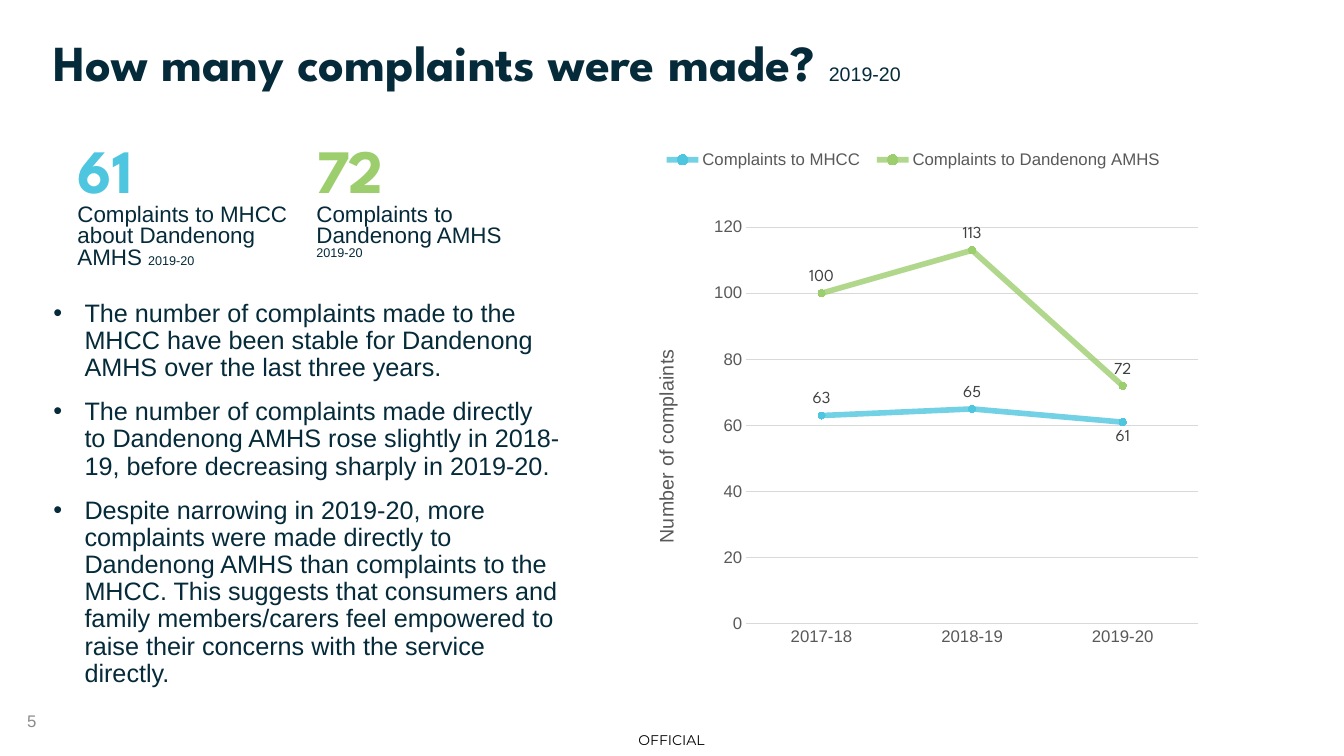
from pptx import Presentation
from pptx.chart.data import CategoryChartData
from pptx.dml.color import RGBColor
from pptx.enum.chart import (XL_CHART_TYPE, XL_LABEL_POSITION, XL_LEGEND_POSITION,
                             XL_MARKER_STYLE, XL_TICK_MARK)
from pptx.enum.text import MSO_ANCHOR, PP_ALIGN
from pptx.oxml import parse_xml
from pptx.oxml.ns import nsdecls, qn
from pptx.util import Inches, Pt
from lxml.etree import SubElement

COLORS = {"navy": "052A39", "blue": "4FC6DF", "green": "9DCE6E", "black": "000000",
          "page": "8C8C8C", "axis": "595959", "grid": "D9D9D9", "label": "404040"}
HEADING, BODY, MARKING = "League Spartan", "Arial", "Montserrat"


class ComplaintsSlide:
    def __init__(self, presentation):
        self.slide = presentation.slides.add_slide(presentation.slide_layouts[6])

    def style(self, font, size, color, name=BODY, bold=False):
        font.size, font.name, font.bold = Pt(size), name, bold
        font.color.rgb = RGBColor.from_string(COLORS[color])

    def text(self, box, lines, spacing=None, align=None, anchor=MSO_ANCHOR.TOP, inset=None):
        """Each line is a list of (text, size, color, font name, bold) pieces."""
        frame = self.slide.shapes.add_textbox(*map(Inches, box)).text_frame
        frame.word_wrap = True
        frame.vertical_anchor = anchor
        if inset is not None:
            frame.margin_left = frame.margin_right = Inches(inset)
            frame.margin_top = frame.margin_bottom = Inches(inset)
        for index, pieces in enumerate(lines):
            paragraph = frame.paragraphs[0] if index == 0 else frame.add_paragraph()
            paragraph.line_spacing, paragraph.alignment = spacing, align
            for words, *look in pieces:
                if words.startswith("\n"):
                    paragraph.add_line_break()
                run = paragraph.add_run()
                run.text = words.strip("\n")
                self.style(run.font, *look)

    def bullets(self, box, points):
        frame = self.slide.shapes.add_textbox(*map(Inches, box)).text_frame
        frame.word_wrap = True
        for index, point in enumerate(points):
            paragraph = frame.paragraphs[0] if index == 0 else frame.add_paragraph()
            paragraph.text = point
            paragraph.line_spacing = 0.9
            paragraph.space_before = Pt(6 if index else 0)
            paragraph.space_after = Pt(6)
            properties = paragraph._p.get_or_add_pPr()
            properties.set("marL", str(Inches(0.31)))
            properties.set("indent", str(-Inches(0.31)))
            SubElement(properties, qn("a:buFont"), typeface=BODY)
            SubElement(properties, qn("a:buChar"), char="•")
            self.style(paragraph.runs[0].font, 18, "navy")

    def layout(self, **values):
        modes = "".join(f'<c:{side}Mode val="{mode}"/>' for side, mode in
                        (("x", "edge"), ("y", "edge")))
        sizes = "".join(f'<c:{key} val="{value}"/>' for key, value in values.items())
        return modes + sizes

    def place(self, element, position, target="", **values):
        """Give a chart part a manual layout, as fractions of the chart."""
        for existing in element.findall(qn("c:layout")):
            element.remove(existing)
        layout = parse_xml(f'<c:layout {nsdecls("c")}><c:manualLayout>{target}'
                           f'{self.layout(**values)}</c:manualLayout></c:layout>')
        element.insert(position, layout)

    def line_chart(self, box, categories, series, axis_title):
        data = CategoryChartData()
        data.categories = categories
        for name, values, _ in series:
            data.add_series(name, values)
        chart = self.slide.shapes.add_chart(
            XL_CHART_TYPE.LINE_MARKERS, *map(Inches, box), data).chart
        self.style(chart.font, 10, "black")
        chart.has_title = False
        grid_color = RGBColor.from_string(COLORS["grid"])

        # Axes
        years, counts = chart.category_axis, chart.value_axis
        for axis in (years, counts):
            axis.major_tick_mark = axis.minor_tick_mark = XL_TICK_MARK.NONE
            self.style(axis.tick_labels.font, 12, "axis")
        counts.minimum_scale, counts.maximum_scale, counts.major_unit = 0, 120, 20
        counts.format.line.fill.background()
        for line in (years.format.line, counts.major_gridlines.format.line):
            line.color.rgb, line.width = grid_color, Pt(0.75)
        title = counts.axis_title
        title.text_frame.text = axis_title
        self.style(title.text_frame.paragraphs[0].runs[0].font, 14, "axis")
        self.place(title._element, 1, x=0.01, y=0.4)

        # Legend and plot area
        chart.has_legend = True
        chart.legend.position = XL_LEGEND_POSITION.BOTTOM
        chart.legend.include_in_layout = False
        self.style(chart.legend.font, 12, "axis")
        self.place(chart.legend._element, 1, x=0.02, y=0.03, w=0.9, h=0.06)
        self.place(chart._chartSpace.chart.plotArea, 0, '<c:layoutTarget val="inner"/>',
                   x=0.178, y=0.183, w=0.789, h=0.725)

        # Lines, markers and value labels
        chart.plots[0].vary_by_categories = False
        for trend, (_, _, color) in zip(chart.plots[0].series, series):
            rgb = RGBColor.from_string(COLORS[color])
            trend.smooth = False
            trend.format.line.color.rgb, trend.format.line.width = rgb, Pt(4)
            stroke = trend.format.line._ln.find(".//" + qn("a:srgbClr"))
            SubElement(stroke, qn("a:alpha"), val="80000")
            trend.marker.style, trend.marker.size = XL_MARKER_STYLE.CIRCLE, 5
            trend.marker.format.fill.solid()
            trend.marker.format.fill.fore_color.rgb = rgb
            trend.marker.format.line.color.rgb = rgb
            labels = trend.data_labels
            labels.show_value, labels.position = True, XL_LABEL_POSITION.ABOVE
            self.style(labels.font, 12, "label", HEADING)
        last_label = chart.plots[0].series[0].points[2].data_label
        self.style(last_label.font, 12, "label", HEADING)
        last_label.position = XL_LABEL_POSITION.BELOW


def main():
    presentation = Presentation()
    presentation.slide_width, presentation.slide_height = Inches(13.33), Inches(7.5)
    page = ComplaintsSlide(presentation)

    # Footer
    page.text((6.15, 7.19, 1.02, 0.31), [[("OFFICIAL", 10, "black", MARKING)]],
              align=PP_ALIGN.CENTER, anchor=MSO_ANCHOR.MIDDLE, inset=0)
    page.text((0.17, 6.95, 3, 0.4), [[("5", 12, "page")]], anchor=MSO_ANCHOR.MIDDLE)

    # Findings
    page.bullets((0.43, 2.93, 5.22, 4.01), [
        "The number of complaints made to the MHCC have been stable for Dandenong AMHS "
        "over the last three years.",
        "The number of complaints made directly to Dandenong AMHS rose slightly in 2018-19, "
        "before decreasing sharply in 2019-20.",
        "Despite narrowing in 2019-20, more complaints were made directly to Dandenong AMHS "
        "than complaints to the MHCC. This suggests that consumers and family members/carers "
        "feel empowered to raise their concerns with the service directly."])

    # Key figures
    figures = [("61", "blue", "Complaints to MHCC about Dandenong AMHS ", "2019-20"),
               ("72", "green", "Complaints to Dandenong AMHS ", "\n2019-20")]
    for column, (count, color, caption, year) in enumerate(figures):
        page.text((0.67 + 2.37 * column, 1.4, 2.37, 1.24),
                  [[(count, 44, color, HEADING, True)],
                   [(caption, 16, "navy"), (year, 9, "navy")]], spacing=0.8)

    # Trend chart
    page.line_chart((6.39, 1.26, 5.68, 5.43), ["2017-18", "2018-19", "2019-20"],
                    [("Complaints to MHCC", (63, 65, 61), "blue"),
                     ("Complaints to Dandenong AMHS", (100, 113, 72), "green")],
                    "Number of complaints")

    # Title
    page.text((0.43, 0.33, 12.42, 0.93),
              [[("How many complaints were made? ", 36, "navy", HEADING, True),
                ("2019-20", 14, "navy")]], spacing=0.9)
    presentation.save("out.pptx")


if __name__ == "__main__":
    main()
